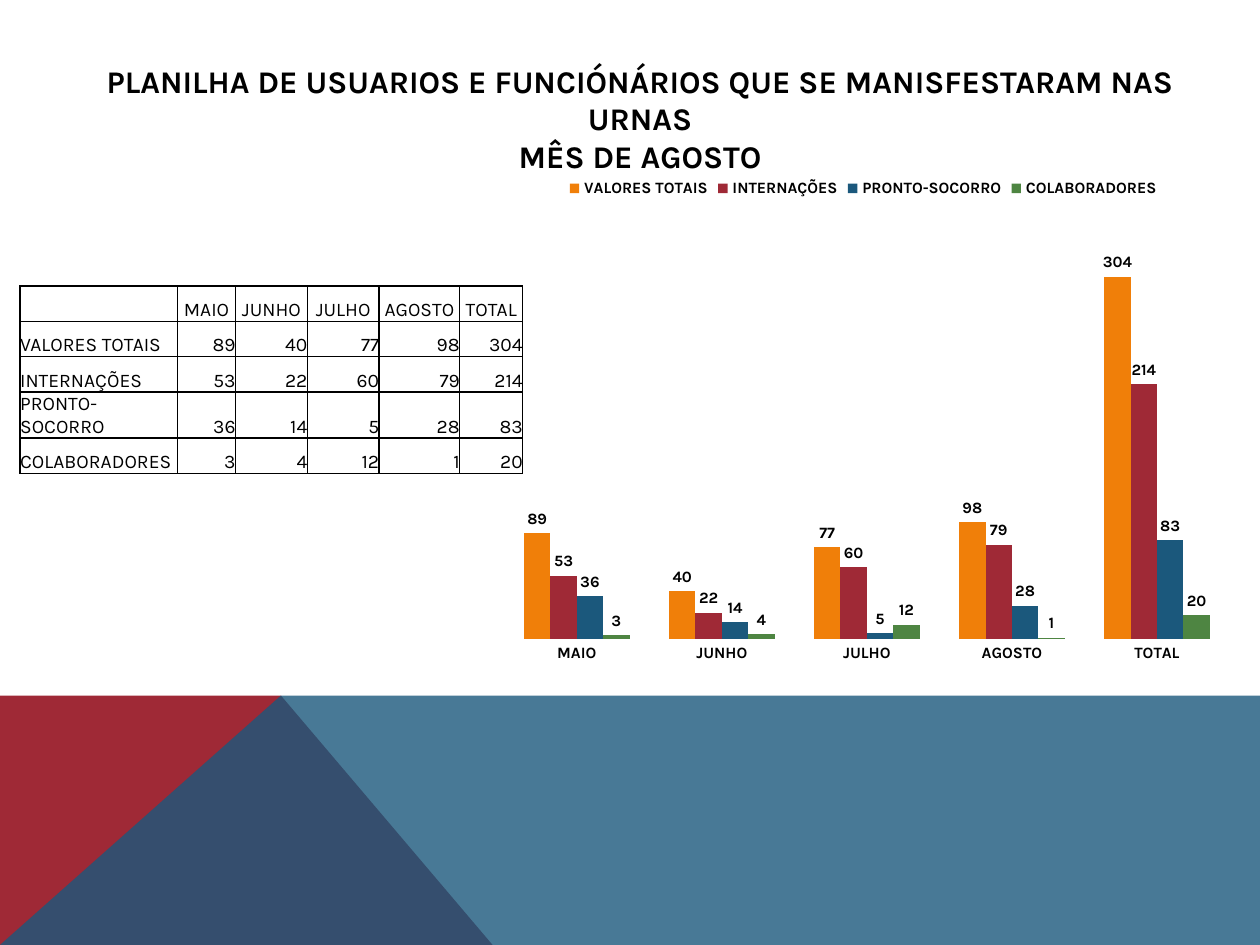
from lxml import etree
from pptx import Presentation
from pptx import util as u
from pptx.chart.data import CategoryChartData
from pptx.dml.color import RGBColor
from pptx.enum import chart as ch
from pptx.enum import text
from pptx.oxml.ns import qn

COLUMNS, ROWS = 100, 75
CELL = u.Inches(0.1)
FONT = "Karla"
COLORS = {
    "ink": "000000",
    "orange": "F07F09",
    "red": "9F2936",
    "blue": "1B587C",
    "green": "4E8542",
}
TITLE = [
    "PLANILHA DE USUARIOS E FUNCIÓNÁRIOS QUE SE MANISFESTARAM NAS URNAS",
    "MÊS DE AGOSTO",
]
MONTHS = ["MAIO", "JUNHO", "JULHO", "AGOSTO", "TOTAL"]
COUNTS = {
    "VALORES TOTAIS": ("orange", [89, 40, 77, 98, 304]),
    "INTERNAÇÕES": ("red", [53, 22, 60, 79, 214]),
    "PRONTO-SOCORRO": ("blue", [36, 14, 5, 28, 83]),
    "COLABORADORES": ("green", [3, 4, 12, 1, 20]),
}


def grid(*units):
    return [u.Emu(round(unit * CELL)) for unit in units]


def rgb(name):
    return RGBColor.from_string(COLORS[name])


def style(font, size, bold=False):
    font.name = FONT
    font.size = u.Pt(size)
    font.bold = bold
    font.color.rgb = rgb("ink")


def add_band(slide, corners, color, opacity=100):
    points = [grid(*corner) for corner in corners]
    outline = slide.shapes.build_freeform(*points[0])
    outline.add_line_segments(points[1:], close=True)
    band = outline.convert_to_shape()
    band.shadow.inherit = False
    band.line.fill.background()
    band.fill.solid()
    band.fill.fore_color.rgb = rgb(color)
    if opacity < 100:
        tint = band.fill._xPr.find(".//" + qn("a:srgbClr"))
        etree.SubElement(tint, qn("a:alpha"), val=str(opacity * 1000))


def add_title(slide, lines):
    frame = slide.shapes.add_textbox(*grid(4.3, 4.4, 93, 10.1)).text_frame
    frame.word_wrap = True
    frame.text = "\n".join(lines)
    for paragraph in frame.paragraphs:
        paragraph.alignment = text.PP_ALIGN.CENTER
        style(paragraph.runs[0].font, 18, True)


def add_borders(cell):
    properties = cell._tc.get_or_add_tcPr()
    for index, side in enumerate(("lnL", "lnR", "lnT", "lnB")):
        border = etree.Element(qn("a:" + side), w=str(u.Pt(1)))
        fill = etree.SubElement(border, qn("a:solidFill"))
        etree.SubElement(fill, qn("a:srgbClr"), val=COLORS["ink"])
        properties.insert(index, border)


def fill_cell(cell, value, alignment):
    cell.text = str(value)
    cell.fill.background()
    cell.vertical_anchor = text.MSO_ANCHOR.BOTTOM
    cell.margin_left = cell.margin_right = 0
    cell.margin_top = cell.margin_bottom = 0
    paragraph = cell.text_frame.paragraphs[0]
    paragraph.alignment = alignment
    for run in paragraph.runs:
        style(run.font, 11)
    if not paragraph.runs:
        paragraph._p.get_or_add_endParaRPr().set("sz", "1100")
    add_borders(cell)


def add_count_table(slide):
    align = text.PP_ALIGN
    lines = [["", *MONTHS]]
    lines += [[name, *values] for name, (_, values) in COUNTS.items()]
    frame = slide.shapes.add_table(
        len(lines), len(lines[0]), *grid(1.6, 22.7, 39.9, 14)
    )
    table = frame.table
    table.first_row = table.horz_banding = False
    for column, width in zip(table.columns, grid(12.5, 4.6, 5.7, 5.7, 6.4, 5)):
        column.width = width
    for r, line in enumerate(lines):
        table.rows[r].height = grid(2.8)[0]
        for c, value in enumerate(line):
            body = align.RIGHT if c else align.LEFT
            fill_cell(table.cell(r, c), value, body if r else align.CENTER)


def set_plot_area(chart, **shares):
    area = chart._chartSpace.chart.plotArea
    for old in area.findall(qn("c:layout")):
        area.remove(old)
    layout = etree.Element(qn("c:layout"))
    manual = etree.SubElement(layout, qn("c:manualLayout"))
    settings = {"layoutTarget": "inner", "xMode": "edge", "yMode": "edge", **shares}
    for name, value in settings.items():
        etree.SubElement(manual, qn("c:" + name), val=str(value))
    area.insert(0, layout)


def add_count_chart(slide):
    data = CategoryChartData()
    data.categories = MONTHS
    for name, (_, values) in COUNTS.items():
        data.add_series(name, values)
    chart = slide.shapes.add_chart(
        ch.XL_CHART_TYPE.COLUMN_CLUSTERED, *grid(38.2, 13.1, 60.6, 40.9), data
    ).chart
    style(chart.font, 10)
    chart.has_title = False
    chart.has_legend = True
    chart.legend.position = ch.XL_LEGEND_POSITION.TOP
    chart.legend.include_in_layout = False
    style(chart.legend.font, 9, True)

    months = chart.category_axis
    months.major_tick_mark = ch.XL_TICK_MARK.NONE
    months.format.line.fill.background()
    style(months.tick_labels.font, 9, True)
    chart.value_axis.visible = False
    chart.value_axis.has_major_gridlines = False
    chart.value_axis.minimum_scale = 0
    chart.value_axis.maximum_scale = 350

    plot = chart.plots[0]
    plot.gap_width = 150
    plot.overlap = 0
    plot.vary_by_categories = False
    for series, (color, _) in zip(plot.series, COUNTS.values()):
        series.format.fill.solid()
        series.format.fill.fore_color.rgb = rgb(color)
        labels = series.data_labels
        labels.show_value = True
        labels.position = ch.XL_LABEL_POSITION.OUTSIDE_END
        style(labels.font, 9, True)
    set_plot_area(chart, x=0.03, y=0.11, w=0.95, h=0.81)


def main():
    deck = Presentation()
    deck.slide_width, deck.slide_height = grid(COLUMNS, ROWS)
    slide = deck.slides.add_slide(deck.slide_layouts[6])
    horizon, peak = 55.2, 22.3
    add_band(
        slide, [(0, ROWS), (0, horizon), (peak, horizon), (39.1, ROWS)], "red"
    )
    add_band(
        slide,
        [(0, ROWS), (peak, horizon), (COLUMNS, horizon), (COLUMNS, ROWS)],
        "blue",
        80,
    )
    add_title(slide, TITLE)
    add_count_table(slide)
    add_count_chart(slide)
    deck.save("out.pptx")


if __name__ == "__main__":
    main()
